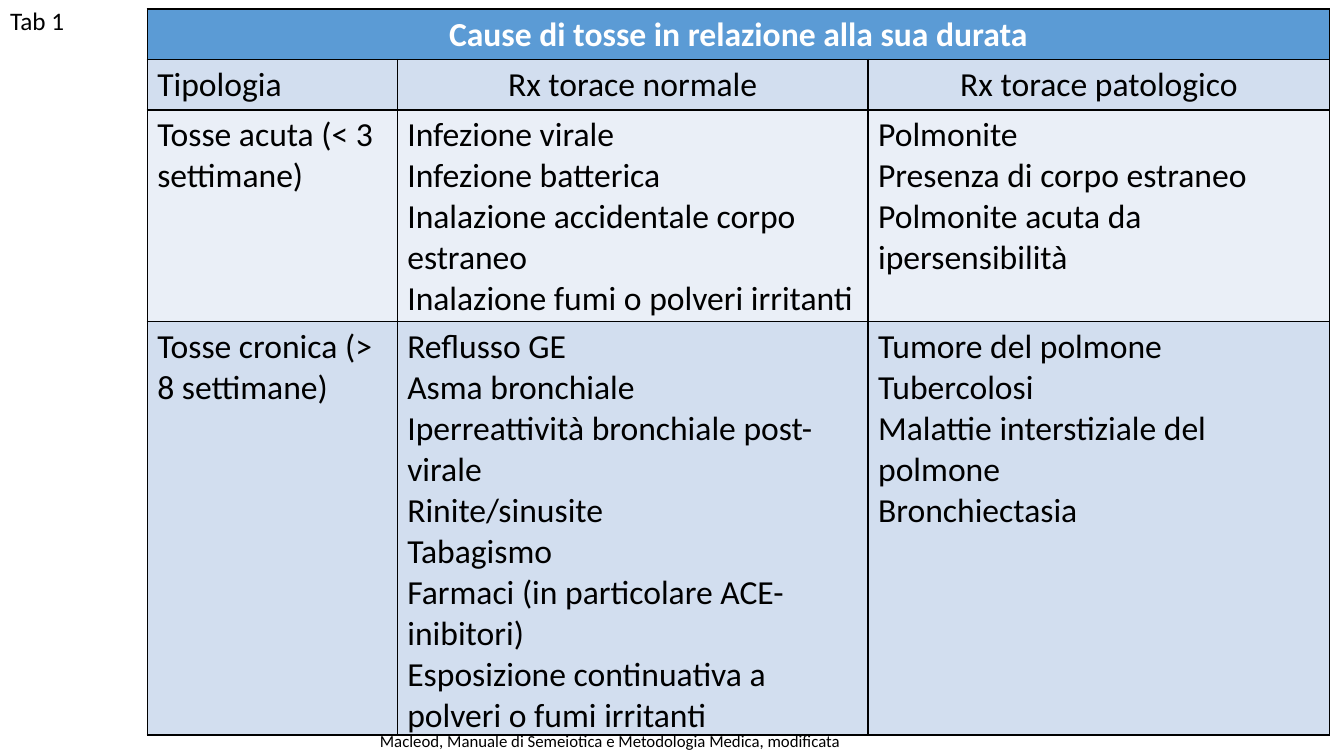
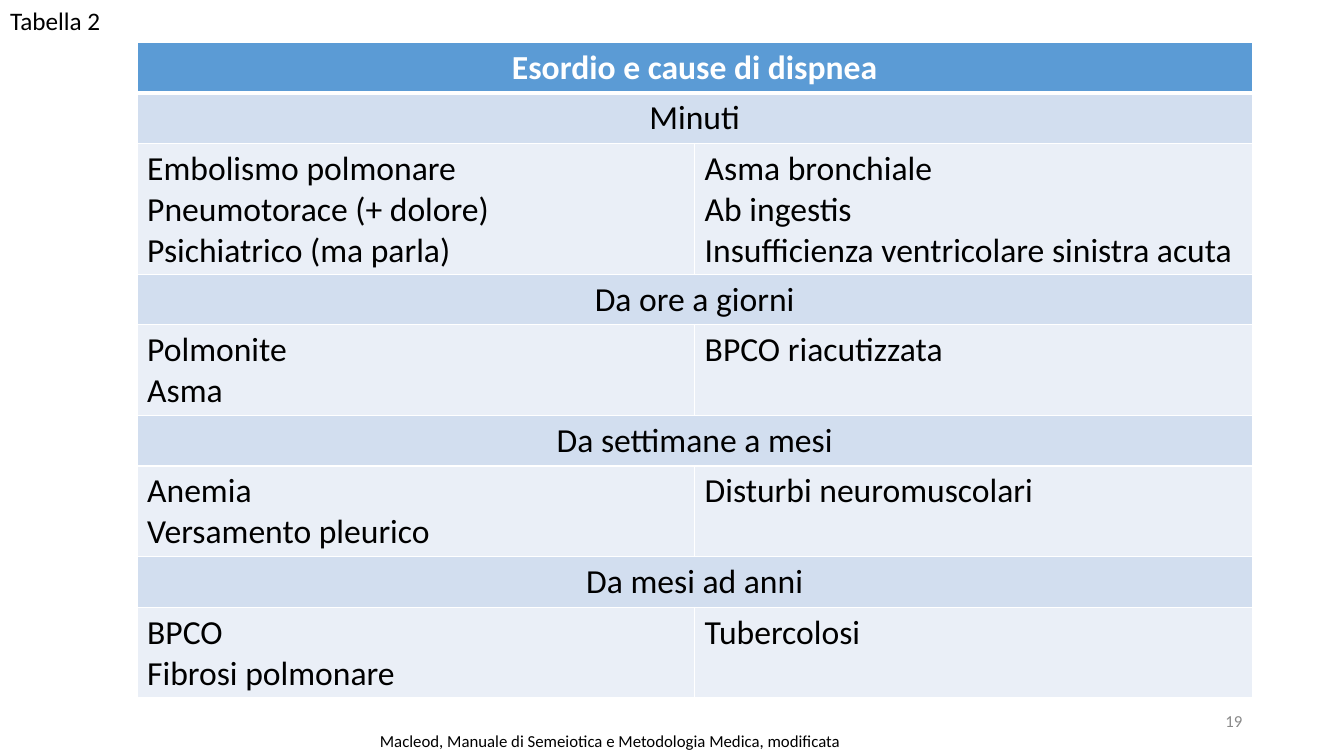
from dataclasses import dataclass
from lxml.etree import SubElement
from pptx import Presentation
from pptx.dml.color import RGBColor as Rgb
from pptx.enum.text import MSO_ANCHOR as Anchor, MSO_AUTO_SIZE as AutoSize, PP_ALIGN as Align
from pptx.oxml.ns import qn
from pptx.util import Inches, Pt


@dataclass(frozen=True)
class Theme:
    """Colours and type sizes shared by the slides."""
    font: str = "Calibri"
    ink: str = "000000"
    paper: str = "FFFFFF"
    muted: str = "898989"
    header: str = "5B9BD5"
    band: str = "D2DEEF"
    light: str = "EAEFF7"
    cell_size: int = 24
    label_size: int = 18
    note_size: int = 12


@dataclass(frozen=True)
class Row:
    """One table row; a row with a single cell spans the whole table."""
    height: float
    fill: str
    cells: tuple
    centred: tuple = ()


THEME = Theme()
SOURCE = "Macleod, Manuale di Semeiotica e Metodologia Medica, modificata"
SOURCE_BOX = (3.67, 7.2, 4.83, 0.3)
NUMBER_BOX = (9.42, 6.95, 3, 0.4)


def apply_format(target, values):
    """Set each named attribute of the target."""
    for name, value in values.items():
        setattr(target, name, value)


def write_text(frame, lines, size, color=THEME.ink, bold=False, align=Align.LEFT):
    """Write one paragraph per line in the shared font."""
    for index, line in enumerate(lines):
        para = frame.add_paragraph() if index else frame.paragraphs[0]
        apply_format(para, {"alignment": align, "line_spacing": 1.0, "space_before": Pt(0)})
        span = para.add_run()
        span.text = line
        apply_format(span.font, {"name": THEME.font, "size": Pt(size), "bold": bold})
        span.font.color.rgb = Rgb.from_string(color)


def add_label(page, text, width):
    """Place the table label in the title placeholder, top left."""
    title = page.shapes.title
    apply_format(title, {"left": Inches(0), "top": Inches(0),
                         "width": Inches(width), "height": Inches(0.4)})
    apply_format(title.text_frame, {"word_wrap": False, "vertical_anchor": Anchor.TOP,
                                    "auto_size": AutoSize.SHAPE_TO_FIT_TEXT})
    write_text(title.text_frame, [text], THEME.label_size)


def add_note(page, box, text, frame_format, **style):
    """Add a small text box at the given place."""
    frame = page.shapes.add_textbox(*map(Inches, box)).text_frame
    apply_format(frame, frame_format)
    write_text(frame, [text], THEME.note_size, **style)


def set_borders(cell, color, top=1, bottom=1):
    """Draw the four borders of a cell, widths in points."""
    properties = cell._tc.get_or_add_tcPr()
    for side, width in {"L": 1, "R": 1, "T": top, "B": bottom}.items():
        line = SubElement(properties, qn(f"a:ln{side}"), w=str(Pt(width)))
        fill = SubElement(line, qn("a:solidFill"))
        SubElement(fill, qn("a:srgbClr"), val=color)


def add_grid(page, left, top, widths, rows, border, rule=1):
    """Add a table whose first row is the header, closed by a rule."""
    box = (left, top, sum(widths), sum(row.height for row in rows))
    table = page.shapes.add_table(len(rows), len(widths), *map(Inches, box)).table
    for column, width in zip(table.columns, widths):
        column.width = Inches(width)
    for index, row in enumerate(rows):
        table.rows[index].height = Inches(row.height)
        cells = [table.cell(index, number) for number in range(len(widths))]
        for cell in cells:
            set_borders(cell, border, rule if index == 1 else 1, rule if index == 0 else 1)
            cell.fill.solid()
            cell.fill.fore_color.rgb = Rgb.from_string(row.fill)
        if len(row.cells) == 1:
            cells[0].merge(cells[-1])
        for number, (cell, lines) in enumerate(zip(cells, row.cells)):
            write_text(cell.text_frame, lines, THEME.cell_size,
                       color=THEME.ink if index else THEME.paper, bold=index == 0,
                       align=Align.CENTER if number in row.centred else Align.LEFT)


def heading(text, fill=THEME.band):
    """Return a centred row that spans the table."""
    return Row(0.5, fill, ((text,),), (0,))


def add_page(deck, label, label_width, number=None):
    """Add a slide with its label, source note and optional number."""
    page = deck.slides.add_slide(deck.slide_layouts[5])
    add_label(page, label, label_width)
    add_note(page, SOURCE_BOX, SOURCE,
             {"word_wrap": False, "auto_size": AutoSize.SHAPE_TO_FIT_TEXT})
    if number:
        add_note(page, NUMBER_BOX, number,
                 {"word_wrap": True, "vertical_anchor": Anchor.MIDDLE},
                 color=THEME.muted, align=Align.RIGHT)
    return page


def add_cough_page(deck):
    """Build the table of causes of cough by duration."""
    rows = [
        heading("Cause di tosse in relazione alla sua durata", THEME.header),
        Row(0.5, THEME.band,
            (("Tipologia",), ("Rx torace normale",), ("Rx torace patologico",)), (1, 2)),
        Row(2.1, THEME.light, (
            ("Tosse acuta (< 3 settimane)",),
            ("Infezione virale", "Infezione batterica",
             "Inalazione accidentale corpo estraneo", "Inalazione fumi o polveri irritanti"),
            ("Polmonite", "Presenza di corpo estraneo",
             "Polmonite acuta da ipersensibilità"))),
        Row(4.1, THEME.band, (
            ("Tosse cronica (> 8 settimane)",),
            ("Reflusso GE", "Asma bronchiale", "Iperreattività bronchiale post-virale",
             "Rinite/sinusite", "Tabagismo", "Farmaci (in particolare ACE-inibitori)",
             "Esposizione continuativa a polveri o fumi irritanti"),
            ("Tumore del polmone", "Tubercolosi", "Malattie interstiziale del polmone",
             "Bronchiectasia"))),
    ]
    page = add_page(deck, "Tab 1", 0.76)
    add_grid(page, 1.46, 0.09, (2.48, 4.67, 4.58), rows, THEME.ink)


def add_dyspnoea_page(deck):
    """Build the table of causes of dyspnoea by onset."""
    onsets = [
        ("Minuti", 1.3,
         ("Embolismo polmonare", "Pneumotorace (+ dolore)", "Psichiatrico (ma parla)"),
         ("Asma bronchiale", "Ab ingestis", "Insufficienza ventricolare sinistra acuta")),
        ("Da ore a giorni", 0.9, ("Polmonite", "Asma"), ("BPCO riacutizzata",)),
        ("Da settimane a mesi", 0.9, ("Anemia", "Versamento pleurico"),
         ("Disturbi neuromuscolari",)),
        ("Da mesi ad anni", 0.9, ("BPCO", "Fibrosi polmonare"), ("Tubercolosi",)),
    ]
    rows = [heading("Esordio e cause di dispnea", THEME.header)]
    for onset, height, *causes in onsets:
        rows += [heading(onset), Row(height, THEME.light, tuple(causes))]
    page = add_page(deck, "Tabella 2", 1.13, "19")
    add_grid(page, 1.36, 0.42, (5.53, 5.53), rows, THEME.paper, rule=3)


def main():
    """Build and save the deck."""
    deck = Presentation()
    apply_format(deck, {"slide_width": Inches(13.33), "slide_height": Inches(7.5)})
    add_cough_page(deck)
    add_dyspnoea_page(deck)
    deck.save("out.pptx")


if __name__ == "__main__":
    main()
